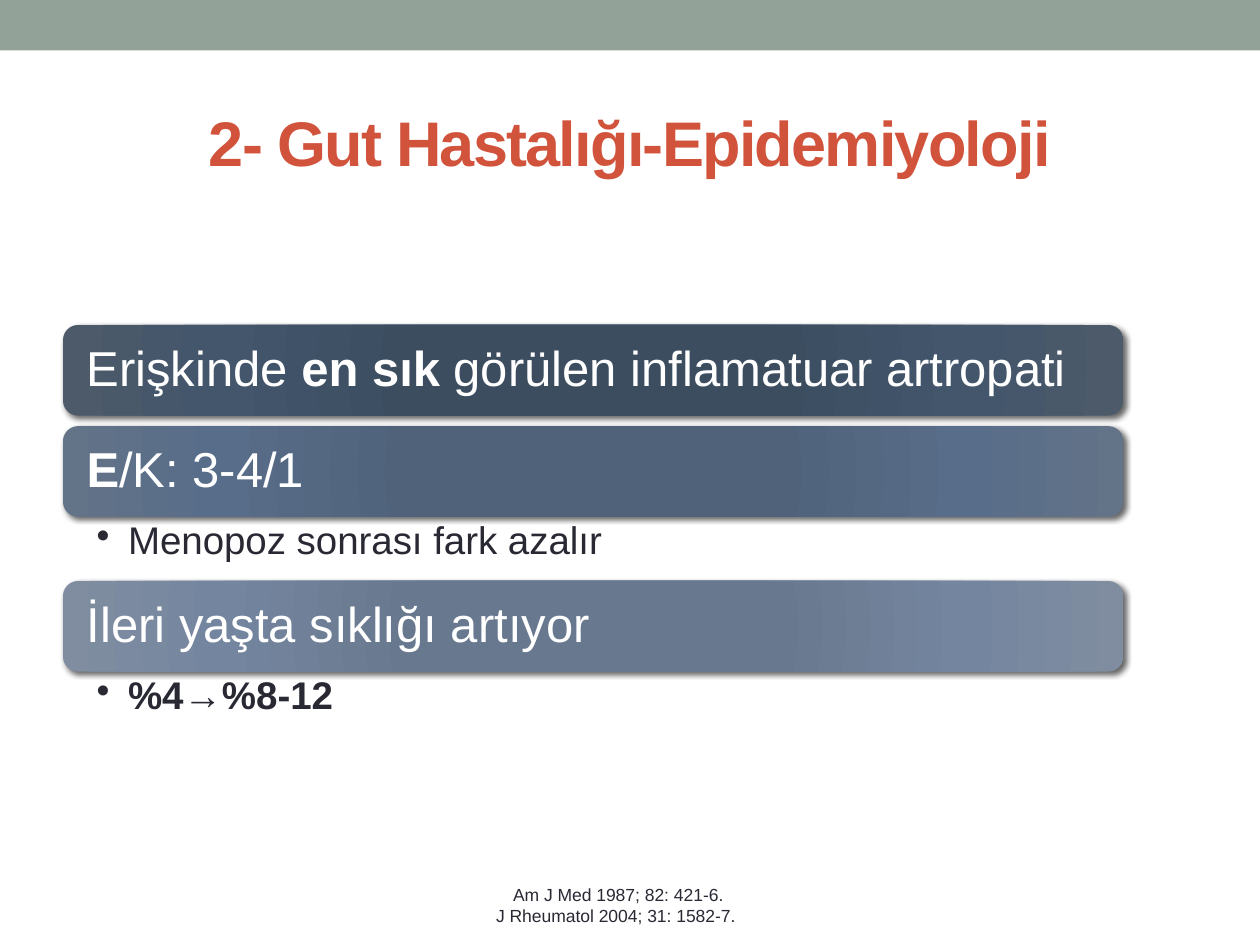
from dataclasses import dataclass
from typing import Any

from pptx import Presentation
from pptx.dml.color import RGBColor
from pptx.enum.shapes import MSO_SHAPE
from pptx.enum.text import MSO_ANCHOR, MSO_AUTO_SIZE, PP_ALIGN
from pptx.oxml import parse_xml
from pptx.oxml.ns import nsdecls, qn
from pptx.util import Pt

LEFT, WIDTH = 36, 606
BAR_HEIGHT, DETAIL_HEIGHT, GAP = 51.8, 36.7, 6
STOPS = (0, 34, 70, 100)

# Each part of a line is (text, bold).
TOPICS = [
    (("3B4D61", "3C4D60", "43566B", "4C5A6A"),
     [("Erişkinde ", False), ("en sık", True), (" görülen inflamatuar artropati", False)],
     None),
    (("4D627C", "4F627A", "586D89", "637388"),
     [("E", True), ("/K: 3-4/1", False)],
     [("Menopoz sonrası fark azalır", False)]),
    (("677790", "68788E", "74869F", "808DA0"),
     [("İleri yaşta sıklığı artıyor", False)],
     [("%4→%8-12", True)]),
]
REFERENCES = ["Am J Med 1987; 82: 421-6.", "J Rheumatol 2004; 31: 1582-7. "]


def color(value):
    return RGBColor.from_string(value)


def apply(target, **values):
    for name, value in values.items():
        setattr(target, name, value)


@dataclass
class PageBuilder:
    page: Any
    font: str = "Arial"
    ink: str = "292934"
    accent: str = "D2533C"
    band_fill: str = "93A299"

    def frame(self, box, margins, anchor, wrap=True):
        left, top, right, bottom = margins
        apply(box.text_frame, margin_left=Pt(left), margin_top=Pt(top),
              margin_right=Pt(right), margin_bottom=Pt(bottom),
              auto_size=MSO_AUTO_SIZE.NONE, vertical_anchor=anchor, word_wrap=wrap)
        return box.text_frame

    def add_text(self, para, parts, size, ink, align=PP_ALIGN.LEFT, spacing=None):
        apply(para, alignment=align, line_spacing=spacing)
        for text, bold in parts:
            span = para.add_run()
            span.text = text
            apply(span.font, name=self.font, size=Pt(size), bold=bold)
            span.font.color.rgb = color(ink)

    def shape(self, kind, left, top, width, height):
        shape = self.page.shapes.add_shape(kind, Pt(left), Pt(top), Pt(width), Pt(height))
        shape.shadow.inherit = False
        shape.line.fill.background()
        return shape

    def band(self):
        band = self.shape(MSO_SHAPE.RECTANGLE, 0, 0, 720, 28.8)
        band.fill.solid()
        band.fill.fore_color.rgb = color(self.band_fill)

    def title(self, text):
        box = self.page.shapes.title
        apply(box, left=Pt(36), top=Pt(42), width=Pt(648), height=Pt(78))
        frame = self.frame(box, (7.2, 3.6, 7.2, 3.6), MSO_ANCHOR.MIDDLE)
        para = frame.paragraphs[0]
        self.add_text(para, [(text, True)], 36, self.accent, PP_ALIGN.CENTER)
        para.runs[0].font._element.set("spc", "-100")

    def bar(self, top, parts, shades):
        bar = self.shape(MSO_SHAPE.ROUNDED_RECTANGLE, LEFT, top, WIDTH, BAR_HEIGHT)
        self.radial_fill(bar, shades)
        self.soft_shadow(bar)
        frame = self.frame(bar, (11, 11, 11, 11), MSO_ANCHOR.MIDDLE)
        self.add_text(frame.paragraphs[0], parts, 28, "FFFFFF", spacing=0.9)

    def radial_fill(self, shape, shades):
        stops = "".join(
            f'<a:gs pos="{stop * 1000}"><a:srgbClr val="{shade}"/></a:gs>'
            for stop, shade in zip(STOPS, shades))
        fill = parse_xml(
            f'<a:gradFill {nsdecls("a")} rotWithShape="1"><a:gsLst>{stops}</a:gsLst>'
            '<a:path path="circle"><a:fillToRect l="100000" t="100000" '
            'r="100000" b="100000"/></a:path></a:gradFill>')
        shape._element.spPr.find(qn("a:prstGeom")).addnext(fill)

    def soft_shadow(self, shape):
        shape._element.spPr.find(qn("a:effectLst")).append(parse_xml(
            f'<a:outerShdw {nsdecls("a")} blurRad="{Pt(3)}" dist="{Pt(2)}" '
            'dir="2700000" rotWithShape="0"><a:srgbClr val="000000">'
            '<a:alpha val="60000"/></a:srgbClr></a:outerShdw>'))

    def text_box(self, left, top, width, height, margins, wrap=True):
        box = self.page.shapes.add_textbox(Pt(left), Pt(top), Pt(width), Pt(height))
        return self.frame(box, margins, MSO_ANCHOR.TOP, wrap)

    def detail(self, top, parts):
        frame = self.text_box(LEFT, top, WIDTH, DETAIL_HEIGHT, (19.2, 2.8, 15.6, 2.8))
        para = frame.paragraphs[0]
        properties = para._p.get_or_add_pPr()
        properties.set("marL", str(Pt(18)))
        properties.set("indent", str(Pt(-18)))
        properties.append(parse_xml(f'<a:buChar {nsdecls("a")} char="•"/>'))
        self.add_text(para, parts, 22, self.ink, spacing=0.9)

    def references(self, lines):
        frame = self.text_box(275.8, 501.8, 154.8, 31.5, (7.2, 3.6, 7.2, 3.6), wrap=False)
        for index, line in enumerate(lines):
            para = frame.add_paragraph() if index else frame.paragraphs[0]
            self.add_text(para, [(line, False)], 10, self.ink, PP_ALIGN.CENTER)


def main():
    deck = Presentation()
    apply(deck, slide_width=Pt(720), slide_height=Pt(540))
    builder = PageBuilder(deck.slides.add_slide(deck.slide_layouts[5]))
    builder.band()
    builder.title("2- Gut Hastalığı-Epidemiyoloji")
    top = 185.7
    for shades, heading, detail in TOPICS:
        builder.bar(top, heading, shades)
        top += BAR_HEIGHT
        if detail:
            builder.detail(top, detail)
            top += DETAIL_HEIGHT
        else:
            top += GAP
    builder.references(REFERENCES)
    deck.save("out.pptx")


if __name__ == "__main__":
    main()
